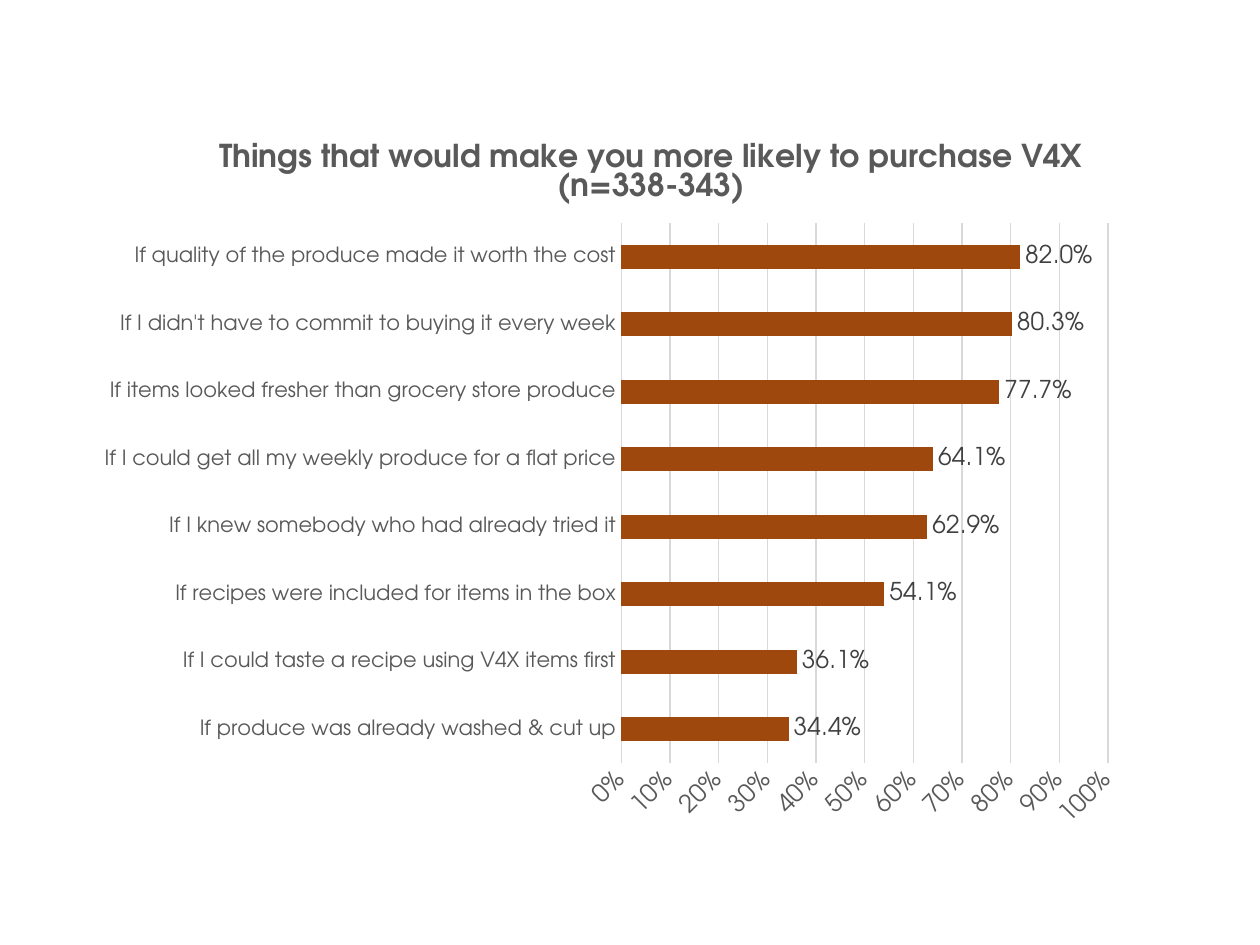
from lxml.etree import SubElement
from pptx import Presentation
from pptx.chart.data import CategoryChartData
from pptx.dml.color import RGBColor
from pptx.enum.chart import XL_CHART_TYPE as ChartType, XL_LABEL_POSITION as LabelPos, XL_TICK_MARK as Tick
from pptx.oxml import parse_xml
from pptx.oxml.ns import nsdecls, qn
from pptx.util import Inches, Pt

FONT = "TeX Gyre Adventor"
TITLE = ["Things that would make you more likely to purchase V4X", "(n=338-343)"]
REASONS = [
    ("If produce was already washed & cut up", 0.344),
    ("If I could taste a recipe using V4X items first", 0.361),
    ("If recipes were included for items in the box", 0.541),
    ("If I knew somebody who had already tried it", 0.629),
    ("If I could get all my weekly produce for a flat price", 0.641),
    ("If items looked fresher than grocery store produce", 0.777),
    ("If I didn't have to commit to buying it every week", 0.803),
    ("If quality of the produce made it worth the cost", 0.82),
]
BAR, TEXT, LABEL, GRID = "9E480E", "595959", "404040", "D9D9D9"
TITLE_AT = {"x": 0.12, "y": 0.01}
PLOT_AT = {"x": 0.492, "y": 0.124, "w": 0.446, "h": 0.718}


def style_font(font, size, color, bold=False):
    font.name, font.size, font.bold = FONT, Pt(size), bold
    font.color.rgb = RGBColor.from_string(color)


def style_line(line):
    line.color.rgb = RGBColor.from_string(GRID)
    line.width = Pt(0.75)


def place(parent, box, inner=False):
    layout = parent.find(qn("c:layout"))
    if layout is None:
        layout = parse_xml(f"<c:layout {nsdecls('c')}/>")
        parent.insert(0, layout)
    manual = SubElement(layout, qn("c:manualLayout"))
    target = {"layoutTarget": "inner"} if inner else {}
    for tag, val in {**target, "xMode": "edge", "yMode": "edge", **box}.items():
        SubElement(manual, qn(f"c:{tag}")).set("val", str(val))


def style_title(chart):
    chart.has_title = True
    tf = chart.chart_title.text_frame
    tf.text = "\n".join(TITLE)
    for p in tf.paragraphs:
        style_font(p.font, 18, TEXT, True)
    place(chart.chart_title._element, TITLE_AT)


def style_axes(chart):
    cat, val = chart.category_axis, chart.value_axis
    for axis, size in ((cat, 12), (val, 14)):
        axis.major_tick_mark = axis.minor_tick_mark = Tick.NONE
        style_font(axis.tick_labels.font, size, TEXT)
    style_line(cat.format.line)
    val.format.line.fill.background()
    val.minimum_scale, val.maximum_scale, val.major_unit = 0, 1, 0.1
    val.tick_labels.number_format = "0%"
    val.tick_labels.number_format_is_linked = False
    style_line(val.major_gridlines.format.line)
    val._element.find(f"{qn('c:txPr')}/{qn('a:bodyPr')}").set("rot", "-2700000")


def style_bars(chart):
    plot = chart.plots[0]
    plot.gap_width, plot.vary_by_categories = 182, False
    fill = plot.series[0].format.fill
    fill.solid()
    fill.fore_color.rgb = RGBColor.from_string(BAR)
    labels = plot.series[0].data_labels
    labels.show_value = True
    labels.position = LabelPos.OUTSIDE_END
    labels.number_format, labels.number_format_is_linked = "0.0%", False
    style_font(labels.font, 14, LABEL)


def main():
    """Build the slide with the bar chart of purchase motivators."""
    prs = Presentation()
    prs.slide_width, prs.slide_height = Inches(10), Inches(7.5)
    s = prs.slides.add_slide(prs.slide_layouts[6])
    data = CategoryChartData(number_format="0.0%")
    data.categories = [reason for reason, _ in REASONS]
    data.add_series("Series 1", [share for _, share in REASONS])
    box = [Inches(n) for n in (0.67, 1.03, 8.66, 5.97)]
    chart = s.shapes.add_chart(ChartType.BAR_CLUSTERED, *box, data).chart
    chart.has_legend = False
    style_font(chart.font, 10, "000000")
    style_title(chart)
    style_axes(chart)
    style_bars(chart)
    place(chart._chartSpace.chart.plotArea, PLOT_AT, inner=True)
    prs.save("out.pptx")


if __name__ == "__main__":
    main()
